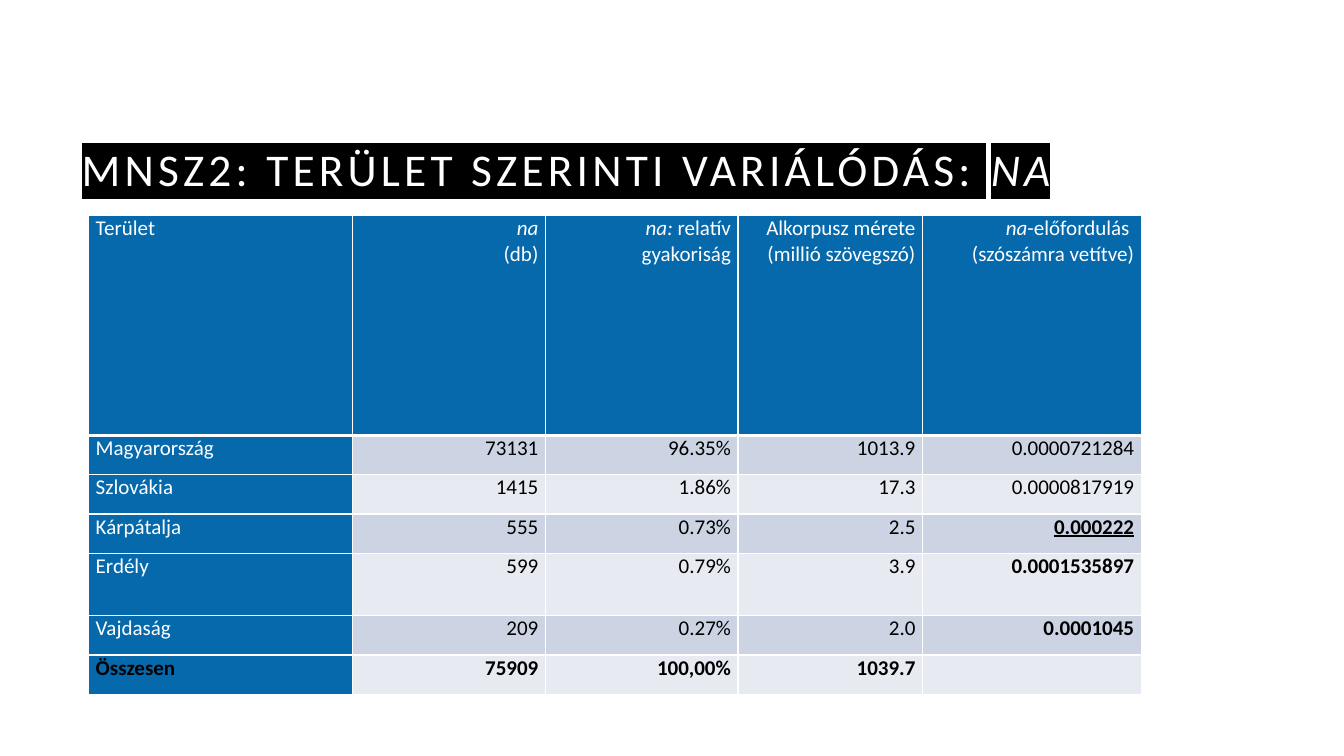
import pptx
import pptx.dml.color
import pptx.enum.text
import pptx.oxml
import pptx.oxml.ns
import pptx.util
from pptx.util import Inches

COLORS = {"white": "FFFFFF", "black": "000000", "blue": "0669AC",
          "band_dark": "CCD4E3", "band_light": "E7EBF1"}
NAMESPACE = pptx.oxml.ns.nsdecls("a")


def rgb(name):
    return pptx.dml.color.RGBColor.from_string(COLORS[name])


def add_runs(paragraph, text, size, color):
    """Add runs; the parts between asterisks are italic."""
    for index, part in enumerate(text.split("*")):
        if part:
            run = paragraph.add_run()
            run.text = part
            run.font.name = "Calibri"
            run.font.size = pptx.util.Pt(size)
            run.font.color.rgb = rgb(color)
            run.font.italic = index % 2 == 1


presentation = pptx.Presentation()
presentation.slide_width = Inches(13.33)
presentation.slide_height = Inches(7.5)
slide = presentation.slides.add_slide(presentation.slide_layouts[5])

# Title: spaced white letters on a black highlight
title = slide.shapes.title
title.left, title.top = Inches(0.71), Inches(0.71)
title.width, title.height = Inches(11.62), Inches(1.25)
title_frame = title.text_frame
title_frame.auto_size = pptx.enum.text.MSO_AUTO_SIZE.NONE
title_frame.vertical_anchor = pptx.enum.text.MSO_ANCHOR.BOTTOM
title_frame.margin_bottom = Inches(0.02)
title_paragraph = title_frame.paragraphs[0]
title_paragraph.alignment = pptx.enum.text.PP_ALIGN.LEFT
title_paragraph.line_spacing = 1.2
add_runs(title_paragraph, "MNSZ2: TERÜLET SZERINTI VARIÁLÓDÁS: *NA*", 32.4, "white")
for run in title_paragraph.runs:
    properties = run.font._element
    properties.set("spc", "300")
    properties.find(pptx.oxml.ns.qn("a:solidFill")).addnext(pptx.oxml.parse_xml(
        f'<a:highlight {NAMESPACE}><a:srgbClr val="{COLORS["black"]}"/></a:highlight>'))

# Table contents
rows = [
    ["Terület", "*na*\n(db)", "*na: *relatív gyakoriság",
     "Alkorpusz mérete (millió szövegszó)", "*na*-előfordulás \n(szószámra vetítve)"],
    ["Magyarország", "73131", "96.35%", "1013.9", "0.0000721284"],
    ["Szlovákia", "1415", "1.86%", "17.3", "0.0000817919"],
    ["Kárpátalja", "555", "0.73%", "2.5", "0.000222"],
    ["Erdély", "599", "0.79%", "3.9", "0.0001535897"],
    ["Vajdaság", "209", "0.27%", "2.0", "0.0001045"],
    ["Összesen", "75909", "100,00%", "1039.7", ""],
]
column_widths = [2.62, 1.91, 1.91, 1.83, 2.17]
row_heights = [2.18, 0.39, 0.39, 0.39, 0.62, 0.39, 0.39]
total_row = len(rows) - 1
bold_cells = {(3, 4), (4, 4), (5, 4)} | {(total_row, column) for column in range(5)}

table = slide.shapes.add_table(
    len(rows), len(column_widths), Inches(0.88), Inches(2.14),
    Inches(sum(column_widths)), Inches(sum(row_heights))).table
for column, width in zip(table.columns, column_widths):
    column.width = Inches(width)
for row, height in zip(table.rows, row_heights):
    row.height = Inches(height)

# Cells: blue header row and first column, banded body
for row_index, texts in enumerate(rows):
    for column_index, text in enumerate(texts):
        cell = table.cell(row_index, column_index)
        cell.margin_left = cell.margin_right = Inches(0.07)
        cell.margin_top = cell.margin_bottom = 0
        is_header = row_index == 0 or column_index == 0
        text_color = "white" if is_header and row_index != total_row else "black"

        for line_index, line in enumerate(text.split("\n")):
            frame = cell.text_frame
            paragraph = frame.add_paragraph() if line_index else frame.paragraphs[0]
            if column_index:
                paragraph.alignment = pptx.enum.text.PP_ALIGN.RIGHT
            add_runs(paragraph, line, 15, text_color)
            for run in paragraph.runs:
                run.font.bold = (row_index, column_index) in bold_cells
                run.font.underline = (row_index, column_index) == (3, 4)

        # White borders, thicker between header and body
        for side in "LRTB":
            is_divider = (row_index, side) in [(0, "B"), (1, "T")]
            width = pptx.util.Pt(3 if is_divider else 1)
            cell._tc.get_or_add_tcPr().append(pptx.oxml.parse_xml(
                f'<a:ln{side} {NAMESPACE} w="{width}"><a:solidFill>'
                f'<a:srgbClr val="{COLORS["white"]}"/></a:solidFill></a:ln{side}>'))
        band = "band_dark" if row_index % 2 else "band_light"
        cell.fill.solid()
        cell.fill.fore_color.rgb = rgb("blue" if is_header else band)

presentation.save("out.pptx")
